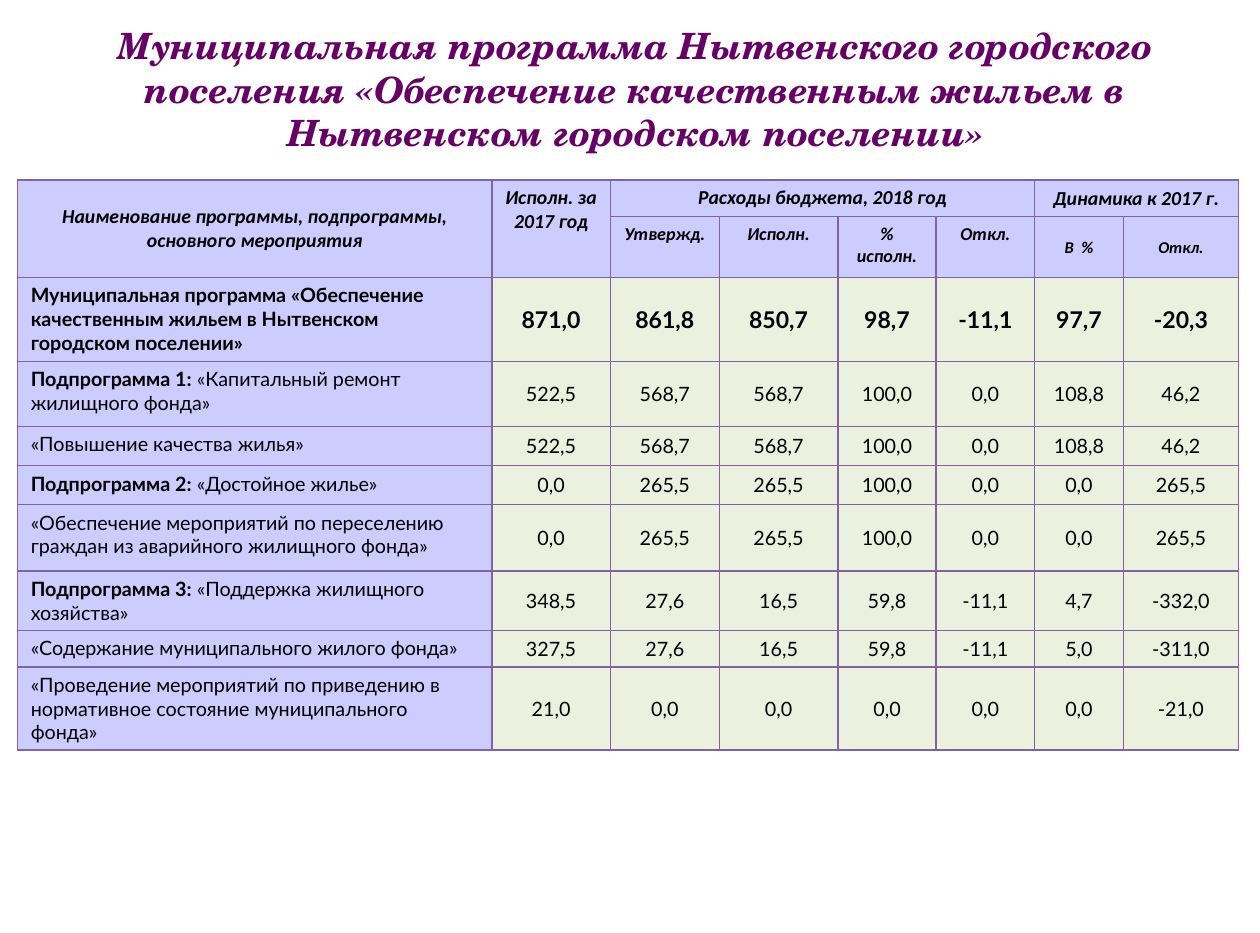
from dataclasses import dataclass

from lxml.etree import SubElement
from pptx import Presentation
from pptx.dml.color import RGBColor
from pptx.enum.text import MSO_ANCHOR, MSO_AUTO_SIZE, PP_ALIGN
from pptx.oxml.ns import qn
from pptx.util import Inches, Pt

# Content
TITLE = ("Муниципальная программа Нытвенского городского поселения "
         "«Обеспечение качественным жильем в Нытвенском городском поселении»")

# Header cells: row, column, rows spanned, columns spanned, text
GROUP_HEADERS = [
    (0, 0, 2, 1, "Наименование программы, подпрограммы, основного мероприятия"),
    (0, 1, 2, 1, "Исполн. за 2017 год"),
    (0, 2, 1, 4, "Расходы бюджета, 2018 год"),
    (0, 6, 1, 2, "Динамика к 2017 г."),
]
COLUMN_HEADERS = ["Утвержд.", "Исполн.", "% исполн.", "Откл.", "В  %", "Откл."]

# Body rows: bold part of the name, plain part, values
PROGRAMS = [
    ("Муниципальная программа «Обеспечение качественным жильем в Нытвенском "
     "городском поселении»", "", "871,0 861,8 850,7 98,7 -11,1 97,7 -20,3"),
    ("Подпрограмма 1:", " «Капитальный ремонт жилищного фонда»",
     "522,5 568,7 568,7 100,0 0,0 108,8 46,2"),
    ("", "«Повышение качества жилья»", "522,5 568,7 568,7 100,0 0,0 108,8 46,2"),
    ("Подпрограмма 2:", " «Достойное жилье»", "0,0 265,5 265,5 100,0 0,0 0,0 265,5"),
    ("", "«Обеспечение мероприятий по переселению граждан из аварийного "
     "жилищного фонда»", "0,0 265,5 265,5 100,0 0,0 0,0 265,5"),
    ("Подпрограмма 3:", " «Поддержка жилищного хозяйства»",
     "348,5 27,6 16,5 59,8 -11,1 4,7 -332,0"),
    ("", "«Содержание муниципального жилого фонда»",
     "327,5 27,6 16,5 59,8 -11,1 5,0 -311,0"),
    ("", "«Проведение мероприятий по приведению в нормативное состояние "
     "муниципального фонда»", "21,0 0,0 0,0 0,0 0,0 0,0 -21,0"),
]

# Slide size in points; grid in inches
SLIDE_SIZE = (765.5, 567)
TITLE_BOX = (0.4, 0, 9.92, 1.19)
TITLE_PADDING = (0.11, 0.2, 0.11, 0.05)
TABLE_ORIGIN = (0.15, 1.52)
COLUMN_WIDTHS = [4, 1, 0.92, 1, 0.83, 0.83, 0.75, 0.97]
ROW_HEIGHTS = [0.31, 0.51, 0.71, 0.55, 0.33, 0.33, 0.56, 0.5, 0.31, 0.7]
PADDING = (0.11, 0.05, 0.11, 0.05)
TIGHT_PADDING = (0.01, 0.01, 0.01, 0)
HEADER_ROWS = 2
DYNAMICS_COLUMN = 6


@dataclass(frozen=True)
class Theme:
    title_font: str = "TeX Gyre Schola"
    header_font: str = "Calibri"
    body_font: str = "Lato"
    title_color: str = "660066"
    text_color: str = "000000"
    label_fill: str = "CCCCFF"
    value_fill: str = "EBF1DE"
    border_color: str = "8064A2"
    border_width: int = 1
    title_size: int = 22
    total_size: int = 14
    body_size: int = 12
    column_size: int = 11
    dynamics_size: int = 10


THEME = Theme()


def add_text(paragraph, text, *, size=THEME.body_size, font=THEME.body_font,
             color=THEME.text_color, bold=False, italic=False, align=PP_ALIGN.CENTER):
    paragraph.alignment = align
    run = paragraph.add_run()
    run.text = text
    run.font.name = font
    run.font.size = Pt(size)
    run.font.bold = bold
    run.font.italic = italic
    run.font.color.rgb = RGBColor.from_string(color)


def set_margins(holder, margins):
    (holder.margin_left, holder.margin_top,
     holder.margin_right, holder.margin_bottom) = map(Inches, margins)


def style_cell(cell, fill, anchor=MSO_ANCHOR.MIDDLE, padding=PADDING):
    """Set margins, anchor, borders and fill; borders come first in the XML."""
    set_margins(cell, padding)
    cell.vertical_anchor = anchor
    properties = cell._tc.get_or_add_tcPr()
    for side in ("lnL", "lnR", "lnT", "lnB"):
        line = SubElement(properties, qn(f"a:{side}"), w=str(Pt(THEME.border_width)))
        solid = SubElement(line, qn("a:solidFill"))
        SubElement(solid, qn("a:srgbClr"), val=THEME.border_color)
    cell.fill.solid()
    cell.fill.fore_color.rgb = RGBColor.from_string(fill)


def add_title(slide):
    title = slide.shapes.title
    title.left, title.top, title.width, title.height = map(Inches, TITLE_BOX)
    frame = title.text_frame
    frame.word_wrap = True
    frame.auto_size = MSO_AUTO_SIZE.NONE
    frame.vertical_anchor = MSO_ANCHOR.TOP
    set_margins(frame, TITLE_PADDING)
    add_text(frame.paragraphs[0], TITLE, size=THEME.title_size, font=THEME.title_font,
             color=THEME.title_color, bold=True, italic=True)


def add_table(slide):
    size = (sum(COLUMN_WIDTHS), sum(ROW_HEIGHTS))
    table = slide.shapes.add_table(len(ROW_HEIGHTS), len(COLUMN_WIDTHS),
                                   *map(Inches, TABLE_ORIGIN + size)).table
    table.first_row = table.horz_banding = False
    for column, width in zip(table.columns, COLUMN_WIDTHS):
        column.width = Inches(width)
    for row, height in zip(table.rows, ROW_HEIGHTS):
        row.height = Inches(height)
    return table


def fill_header(table):
    for row in range(HEADER_ROWS):
        for column in range(len(COLUMN_WIDTHS)):
            dynamics = column >= DYNAMICS_COLUMN
            middle = dynamics or column == 0
            style_cell(table.cell(row, column), THEME.label_fill,
                       MSO_ANCHOR.MIDDLE if middle else MSO_ANCHOR.TOP,
                       TIGHT_PADDING if dynamics else PADDING)
    header = dict(font=THEME.header_font, bold=True, italic=True)
    for row, column, rows, columns, text in GROUP_HEADERS:
        cell = table.cell(row, column)
        cell.merge(table.cell(row + rows - 1, column + columns - 1))
        add_text(cell.text_frame.paragraphs[0], text, **header)
    for column, text in enumerate(COLUMN_HEADERS, start=2):
        size = THEME.dynamics_size if column >= DYNAMICS_COLUMN else THEME.column_size
        add_text(table.cell(1, column).text_frame.paragraphs[0], text, size=size, **header)


def fill_body(table):
    for row, (bold_name, plain_name, values) in enumerate(PROGRAMS, start=HEADER_ROWS):
        label = table.cell(row, 0)
        style_cell(label, THEME.label_fill, MSO_ANCHOR.TOP)
        for text, bold in ((bold_name, True), (plain_name, False)):
            if text:
                add_text(label.text_frame.paragraphs[0], text, bold=bold,
                         align=PP_ALIGN.LEFT)
        total = row == HEADER_ROWS
        for column, value in enumerate(values.split(), start=1):
            cell = table.cell(row, column)
            style_cell(cell, THEME.value_fill)
            add_text(cell.text_frame.paragraphs[0], value, bold=total,
                     size=THEME.total_size if total else THEME.body_size)


def main():
    presentation = Presentation()
    presentation.slide_width, presentation.slide_height = map(Pt, SLIDE_SIZE)
    slide = presentation.slides.add_slide(presentation.slide_layouts[5])
    add_title(slide)
    table = add_table(slide)
    fill_header(table)
    fill_body(table)
    presentation.save("out.pptx")


if __name__ == "__main__":
    main()
